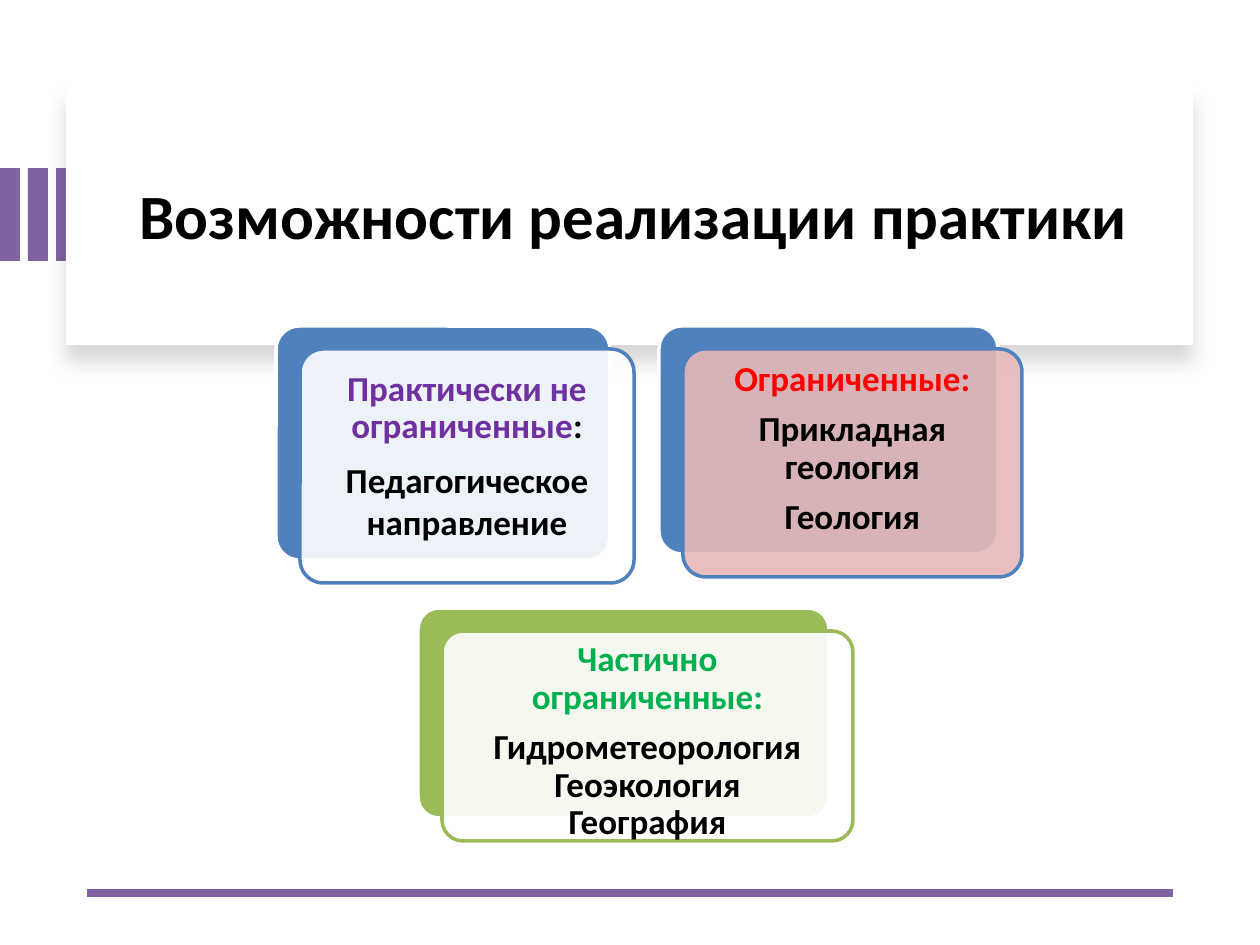
"""Build the slide on how freely the field practice can be carried out."""
from dataclasses import dataclass

from lxml import etree
from pptx import Presentation
from pptx.dml.color import RGBColor
from pptx.enum.shapes import MSO_CONNECTOR, MSO_SHAPE
from pptx.enum.text import MSO_ANCHOR, PP_ALIGN
from pptx.oxml.ns import qn
from pptx.util import Emu, Pt

RECTANGLE = MSO_SHAPE.RECTANGLE
ROUNDED = MSO_SHAPE.ROUNDED_RECTANGLE
STRAIGHT = MSO_CONNECTOR.STRAIGHT
TOP, MIDDLE = MSO_ANCHOR.TOP, MSO_ANCHOR.MIDDLE
CENTER = PP_ALIGN.CENTER
EMU_PER_PX = 914400 / 126
FONT = "Calibri"
TITLE_ONLY = 5
COLORS = {
    "white": "FFFFFF", "black": "000000", "purple": "8064A2",
    "blue": "4F81BD", "olive": "9BBB59", "pink": "E6B9B8",
    "violet": "7030A0", "green": "00B050", "red": "FF0000",
}


@dataclass(frozen=True)
class Box:
    left: int
    top: int
    width: int
    height: int

    def shifted(self, right: int, down: int) -> "Box":
        return Box(self.left + right, self.top + down, self.width, self.height)


@dataclass(frozen=True)
class Line:
    spans: tuple[tuple[str, str], ...]
    spacing: float = 0.9
    after: int = 7


@dataclass(frozen=True)
class Card:
    box: Box
    accent: str
    face: str
    text_top: int
    lines: tuple[Line, ...]


STRIPES = [Box(28 * index, 168, 20, 93) for index in range(3)]
PANEL = Box(66, 84, 1127, 261)
TITLE = Box(108, 112, 1051, 214)
CARDS = (
    Card(Box(276, 326, 334, 234), "blue", "white", 15, (
        Line((("Практически не ограниченные", "violet"), (":", "black"))),
        Line((("Педагогическое направление", "black"),), spacing=1.0),
    )),
    Card(Box(418, 608, 411, 210), "olive", "white", 4, (
        Line((("Частично ограниченные:", "green"),)),
        Line((("Гидрометеорология", "black"),), after=0),
        Line((("Геоэкология", "black"),), after=0),
        Line((("География", "black"),), after=0),
    )),
    Card(Box(659, 326, 339, 228), "blue", "pink", 6, (
        Line((("Ограниченные:", "red"),)),
        Line((("Прикладная геология", "black"),)),
        Line((("Геология", "black"),)),
    )),
)


def px(value: int) -> Emu:
    """Turn pixels into EMU."""
    return Emu(round(value * EMU_PER_PX))


def color(name: str) -> RGBColor:
    """Look up a named colour."""
    return RGBColor.from_string(COLORS[name])


def place(shape, box: Box) -> None:
    """Move and size a shape."""
    shape.left, shape.top = px(box.left), px(box.top)
    shape.width, shape.height = px(box.width), px(box.height)


def add_block(page, kind, box: Box, fill: str, outline: str | None = None):
    """Add a filled shape with an optional outline."""
    shape = page.shapes.add_shape(kind, 0, 0, 0, 0)
    place(shape, box)
    shape.shadow.inherit = False
    shape.fill.solid()
    shape.fill.fore_color.rgb = color(fill)
    if outline:
        shape.line.color.rgb = color(outline)
        shape.line.width = Pt(2)
    else:
        shape.line.fill.background()
    return shape


def set_alpha(color_node, percent: int) -> None:
    """Give a colour element an opacity."""
    etree.SubElement(color_node, qn("a:alpha"), val=str(percent * 1000))


def add_soft_shadow(shape) -> None:
    """Drop a faint shadow below a shape."""
    effects = shape.element.spPr.find(qn("a:effectLst"))
    shadow = etree.SubElement(
        effects, qn("a:outerShdw"), blurRad=str(Pt(11)), dist=str(Pt(10)),
        dir="5400000", algn="t", rotWithShape="0")
    set_alpha(etree.SubElement(shadow, qn("a:srgbClr"), val=COLORS["black"]), 15)


def format_span(span, size: int, name: str) -> None:
    """Set the font of a run."""
    span.font.name, span.font.size, span.font.bold = FONT, Pt(size), True
    span.font.color.rgb = color(name)


def add_title(page, panel) -> None:
    """Fill the title placeholder and bring it in front of its panel."""
    title = page.shapes.title
    place(title, TITLE)
    panel.element.addnext(title.element)
    title.text_frame.text = "Возможности реализации практики"
    title.text_frame.vertical_anchor = MIDDLE
    para = title.text_frame.paragraphs[0]
    para.alignment, para.line_spacing = CENTER, 0.9
    format_span(para.runs[0], 36, "black")


def add_card(page, card: Card) -> None:
    """Draw a card: a solid back and a translucent front with text."""
    back = add_block(page, ROUNDED, card.box, card.accent, "white")
    front = add_block(page, ROUNDED, card.box.shifted(24, 23), card.face, card.accent)
    back.adjustments[0] = front.adjustments[0] = 0.1
    set_alpha(front.element.spPr.find(qn("a:solidFill"))[0], 90)
    frame = front.text_frame
    frame.word_wrap, frame.vertical_anchor = True, TOP
    frame.margin_left = frame.margin_right = px(20)
    frame.margin_top, frame.margin_bottom = px(card.text_top), 0
    for index, line in enumerate(card.lines):
        para = frame.add_paragraph() if index else frame.paragraphs[0]
        para.alignment, para.line_spacing = CENTER, line.spacing
        para.space_after = Pt(line.after)
        for text, name in line.spans:
            span = para.add_run()
            span.text = text
            format_span(span, 20, name)


def add_footer_rule(page) -> None:
    """Draw the thick rule at the foot of the slide."""
    rule = page.shapes.add_connector(STRAIGHT, px(1173), px(893), px(87), px(893))
    rule.line.color.rgb = color("purple")
    rule.line.width = Pt(4.5)
    etree.SubElement(rule.element.spPr, qn("a:effectLst"))


def main() -> None:
    """Build and save the deck."""
    deck = Presentation()
    deck.slide_width, deck.slide_height = px(1260), px(945)
    page = deck.slides.add_slide(deck.slide_layouts[TITLE_ONLY])
    for stripe in STRIPES:
        add_block(page, RECTANGLE, stripe, "purple")
    panel = add_block(page, RECTANGLE, PANEL, "white")
    add_soft_shadow(panel)
    add_title(page, panel)
    add_footer_rule(page)
    for card in CARDS:
        add_card(page, card)
    deck.save("out.pptx")


if __name__ == "__main__":
    main()
